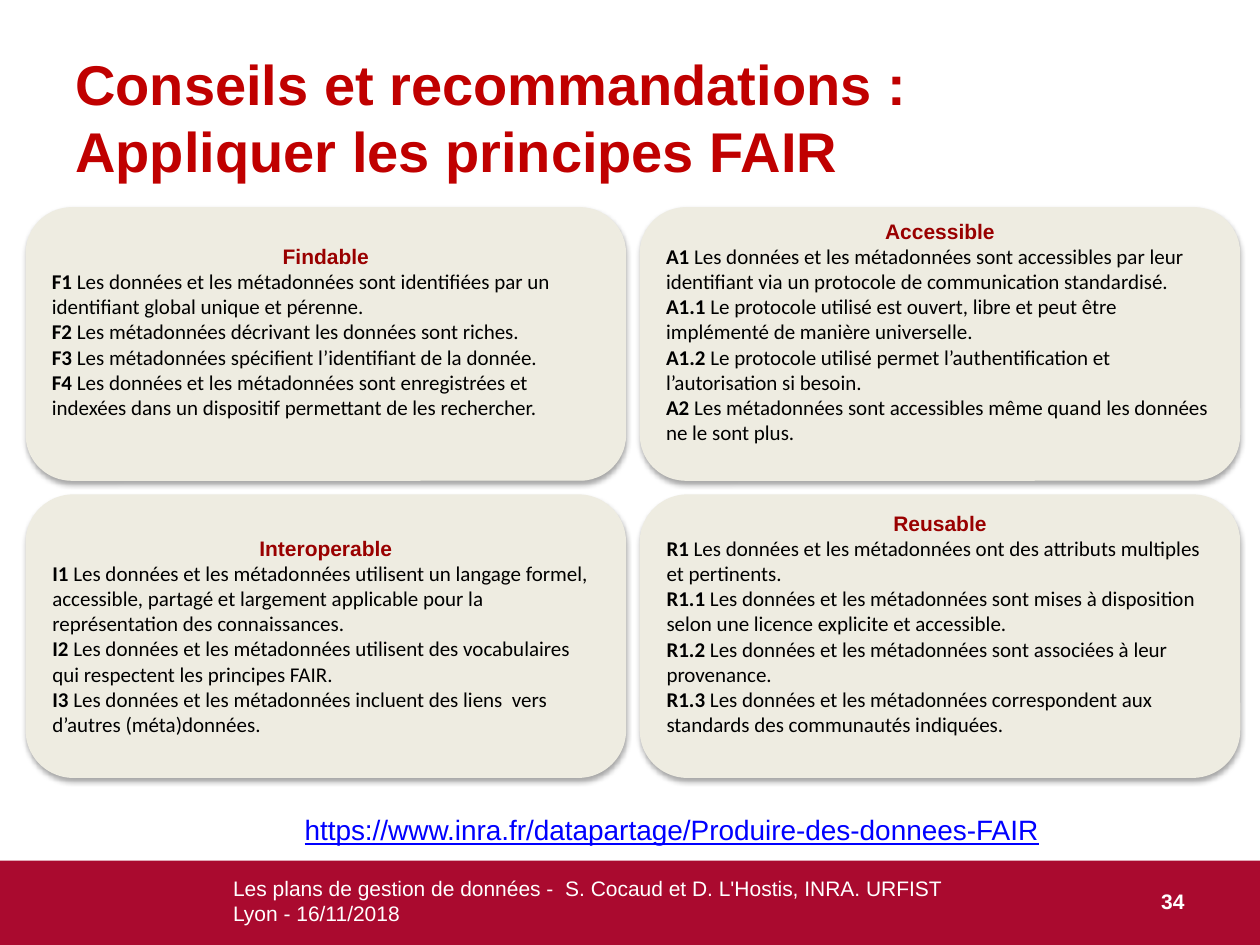
from lxml import etree
from pptx import Presentation
from pptx.dml.color import RGBColor
from pptx.enum.shapes import MSO_SHAPE
from pptx.enum.text import MSO_ANCHOR, PP_ALIGN
from pptx.oxml.ns import qn
from pptx.util import Cm, Pt

RECT, ROUND = MSO_SHAPE.RECTANGLE, MSO_SHAPE.ROUNDED_RECTANGLE
TOP, MIDDLE = MSO_ANCHOR.TOP, MSO_ANCHOR.MIDDLE
LEFT, CENTER, RIGHT = PP_ALIGN.LEFT, PP_ALIGN.CENTER, PP_ALIGN.RIGHT

COLORS = {"title": "C00000", "bar": "AA0A2F", "card": "EEECE1",
          "head": "990000", "text": "000000", "link": "0000FF",
          "light": "FFFFFF"}

TITLE = {"name": "Arial", "size": Pt(32), "bold": True}
SMALL = {"name": "Arial", "size": Pt(12)}
HEAD = {**SMALL, "bold": True}
BODY = {"name": "Calibri", "size": Pt(12), "bold": False}
CODE = {**BODY, "bold": True}
LINK = {"name": "Arial", "size": Pt(16), "underline": True}

# Heading, space kept free at the foot of the card, principles
CARDS = [
    ("Findable", 0.5, [
        ("F1", "Les données et les métadonnées sont identifiées par un identifiant global unique et pérenne."),
        ("F2", "Les métadonnées décrivant les données sont riches."),
        ("F3", "Les métadonnées spécifient l’identifiant de la donnée."),
        ("F4", "Les données et les métadonnées sont enregistrées et indexées dans un dispositif permettant de les rechercher."),
    ]),
    ("Accessible", 0.5, [
        ("A1", "Les données et les métadonnées sont accessibles par leur identifiant via un protocole de communication standardisé."),
        ("A1.1", "Le protocole utilisé est ouvert, libre et peut être implémenté de manière universelle."),
        ("A1.2", "Le protocole utilisé permet l’authentification et l’autorisation si besoin."),
        ("A2", "Les métadonnées sont accessibles même quand les données ne le sont plus."),
    ]),
    ("Interoperable", 0, [
        ("I1", "Les données et les métadonnées utilisent un langage formel, accessible, partagé et largement applicable pour la représentation des connaissances."),
        ("I2", "Les données et les métadonnées utilisent des vocabulaires qui respectent les principes FAIR."),
        ("I3", "Les données et les métadonnées incluent des liens  vers d’autres (méta)données."),
    ]),
    ("Reusable", 0.5, [
        ("R1", "Les données et les métadonnées ont des attributs multiples et pertinents."),
        ("R1.1", "Les données et les métadonnées sont mises à disposition selon une licence explicite et accessible."),
        ("R1.2", "Les données et les métadonnées sont associées à leur provenance."),
        ("R1.3", "Les données et les métadonnées correspondent aux standards des communautés indiquées."),
    ]),
]


def color(key):
    return RGBColor.from_string(COLORS[key])


def add_run(para, text, style, key):
    run = para.add_run()
    run.text = text
    for name, value in style.items():
        setattr(run.font, name, value)
    run.font.color.rgb = color(key)


def add_shadow(shape):
    """Give the shape a soft shadow straight below it."""
    shape.shadow.inherit = False
    effects = shape._element.spPr.find(qn("a:effectLst"))
    outer = etree.SubElement(effects, qn("a:outerShdw"), blurRad=str(Pt(3.1)),
                             dist=str(Pt(1.8)), dir="5400000", rotWithShape="0")
    black = etree.SubElement(outer, qn("a:srgbClr"), val="000000")
    etree.SubElement(black, qn("a:alpha"), val="35000")


def add_panel(slide, kind, box, key):
    panel = slide.shapes.add_shape(kind, *map(Cm, box))
    panel.fill.solid()
    panel.fill.fore_color.rgb = color(key)
    panel.line.fill.background()
    add_shadow(panel)
    return panel


def add_label(slide, box, text, style, key, align=LEFT, anchor=MIDDLE):
    frame = slide.shapes.add_textbox(*map(Cm, box)).text_frame
    frame.word_wrap = True
    frame.vertical_anchor = anchor
    para = frame.paragraphs[0]
    para.alignment = align
    for num, line in enumerate(text.split("\n")):
        if num:
            para.add_line_break()
        add_run(para, line, style, key)


def add_card(slide, box, head, foot, rules):
    card = add_panel(slide, ROUND, box, "card")
    card.line.color.rgb = color("card")
    card.line.width = Pt(0.75)
    frame = card.text_frame
    frame.word_wrap = True
    frame.vertical_anchor = MIDDLE
    frame.margin_bottom = Cm(0.13 + foot)
    para = frame.paragraphs[0]
    para.alignment = CENTER
    add_run(para, head, HEAD, "head")
    for code, text in rules:
        para = frame.add_paragraph()
        para.alignment = LEFT
        add_run(para, code, CODE, "text")
        add_run(para, " " + text, BODY, "text")


def add_grid(slide, box):
    """Lay the four cards out in two rows, the lower one slightly taller."""
    left, top, width, height = box
    gap, lower = 0.3, 5.69
    wide = (width - gap) / 2
    rows = [(top, 5.49), (top + height - lower, lower)]
    for num, (head, foot, rules) in enumerate(CARDS):
        row, col = divmod(num, 2)
        y, high = rows[row]
        add_card(slide, (left + col * (wide + gap), y, wide, high),
                 head, foot, rules)


def add_footer(slide, box):
    left, top, width, height = box
    add_panel(slide, RECT, box, "bar")
    y, high = top + 0.3, 1.02
    add_label(slide, (left + 4.45, y, 15.42, high),
              "Les plans de gestion de données -  S. Cocaud et D. L'Hostis, "
              "INRA. URFIST Lyon - 16/11/2018", SMALL, "light")
    add_label(slide, (left + width - 2.92, y, 1.65, high), "34", HEAD,
              "light", RIGHT)


def main():
    deck = Presentation()
    deck.slide_width, deck.slide_height = Cm(25.4), Cm(19.05)
    slide = deck.slides.add_slide(deck.slide_layouts[6])
    add_footer(slide, (0, 17.35, 25.4, 1.75))
    add_label(slide, (1.27, 0.76, 22.86, 3.18),
              "Conseils et recommandations :\nAppliquer les principes FAIR",
              TITLE, "title")
    add_grid(slide, (0.53, 4.19, 24.46, 11.48))
    add_label(slide, (5.89, 16.26, 15.62, 0.94),
              "https://www.inra.fr/datapartage/Produire-des-donnees-FAIR",
              LINK, "link", anchor=TOP)
    deck.save("out.pptx")


if __name__ == "__main__":
    main()
